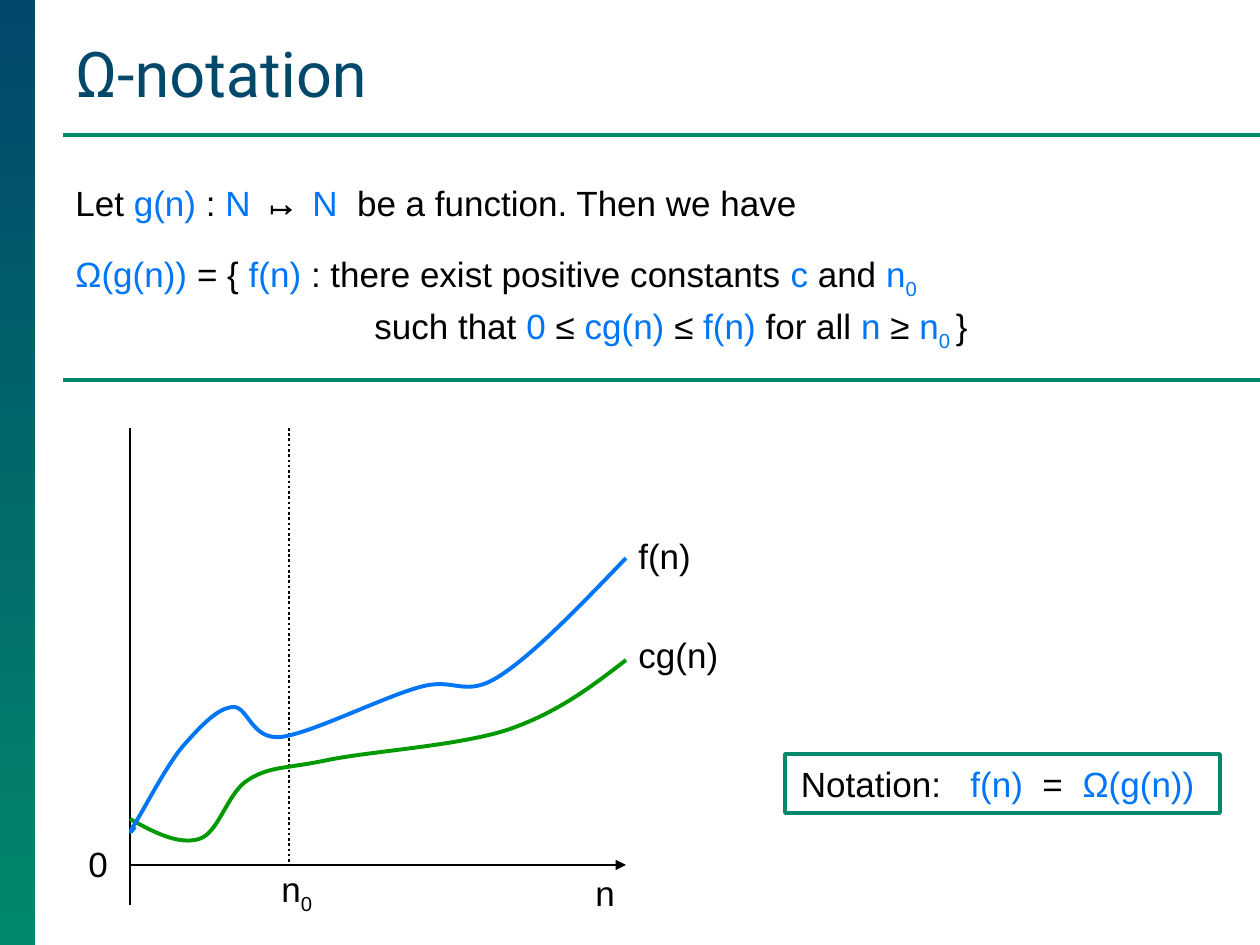
from lxml.etree import SubElement
from pptx import Presentation
from pptx.dml.color import RGBColor
from pptx.enum.dml import MSO_LINE
from pptx.enum.shapes import MSO_CONNECTOR, MSO_SHAPE
from pptx.enum.text import MSO_ANCHOR, PP_ALIGN
from pptx.oxml.ns import qn
from pptx.util import Pt

SCALE = 914400 / 126  # EMU per px
COLORS = {"navy": "01486B", "teal": "02886B", "blue": "0075F6",
          "green": "009900", "black": "000000"}

# Curves: a start point, then three points for each Bezier segment
CG_CURVE = [(0, 391), (25, 405), (49, 417), (69, 411), (89, 405), (97, 365),
            (118, 352), (140, 338), (155, 341), (198, 332), (242, 323),
            (327, 318), (377, 302), (427, 285), (461, 259), (496, 232)]
F_CURVE = [(5, 399), (5, 399), (-4, 411), (4, 397), (12, 385), (36, 338),
           (53, 318), (70, 299), (87, 280), (103, 279), (118, 278), (121, 312),
           (151, 309), (182, 305), (253, 269), (290, 259), (325, 249),
           (334, 270), (368, 249), (403, 227), (450, 178), (496, 130)]


def px(*lengths):
    return [round(length * SCALE) for length in lengths]


def color(name):
    return RGBColor.from_string(COLORS[name])


def add_run(para, text, shade="black", size=20, font="Arial", sub=False):
    span = para.add_run()
    span.text = text
    span.font.size = Pt(size)
    span.font.name = font
    span.font.color.rgb = color(shade)
    if sub:
        span._r.get_or_add_rPr().set("baseline", "-25000")
    return span


def add_runs(para, runs):
    """Write (text, color) runs; a third item makes the run a subscript."""
    for text, shade, *sub in runs:
        add_run(para, text, shade, sub=bool(sub))


def add_text_box(page, left, top, width, height):
    box = page.shapes.add_textbox(*px(left, top, width, height))
    box.text_frame.word_wrap = True
    return box.text_frame


def add_line(page, start, end, shade="black", weight=1.5):
    line = page.shapes.add_connector(MSO_CONNECTOR.STRAIGHT, *px(*start, *end))
    line.line.color.rgb = color(shade)
    line.line.width = Pt(weight)
    SubElement(line._element.spPr, qn("a:effectLst"))
    return line


def add_curve(page, left, top, points, shade):
    builder = page.shapes.build_freeform(*points[0], scale=SCALE)
    builder.add_line_segments(points[1:], close=False)
    curve = builder.convert_to_shape(*px(left, top))
    # Join each three straight segments into one Bezier segment
    segments = list(curve._element.iter(qn("a:lnTo")))
    for first, second, third in zip(*[iter(segments)] * 3):
        first.tag = qn("a:cubicBezTo")
        for extra in (second, third):
            first.append(extra[0])
            extra.getparent().remove(extra)
    curve.fill.background()
    curve.line.color.rgb = color(shade)
    curve.line.width = Pt(2.25)
    curve.shadow.inherit = False


def add_side_band(page, left, top, width, height):
    band = page.shapes.add_shape(MSO_SHAPE.RECTANGLE, *px(left, top, width, height))
    band.shadow.inherit = False
    band.line.fill.background()
    band.fill.gradient()
    band.fill.gradient_angle = 270
    for stop, shade in zip(band.fill.gradient_stops, ("navy", "teal")):
        stop.color.rgb = color(shade)


def add_title(page, left, top, width, height):
    frame = add_text_box(page, left, top, width, height)
    frame.vertical_anchor = MSO_ANCHOR.BOTTOM
    add_run(frame.paragraphs[0], "Ω-notation", "navy", 36, "Roboto")


def add_definition(page, left, top, width, height):
    frame = add_text_box(page, left, top, width, height)
    para = frame.paragraphs[0]
    add_runs(para, [("Let", "black"), (" g(n) ", "blue"), (":", "black"),
                    (" N ", "blue")])
    add_run(para, "↦", font="Noto Sans Mono").font.bold = True
    add_runs(para, [(" N ", "blue"), (" be a function. Then we have", "black")])

    para = frame.add_paragraph()
    para.space_before = Pt(17)
    add_runs(para, [("Ω(g(n))", "blue"), (" = { ", "black"), ("f(n)", "blue"),
                    (" : there exist positive constants ", "black"),
                    ("c", "blue"), (" and ", "black"), ("n", "blue"),
                    ("0", "blue", "sub")])

    para = frame.add_paragraph()
    para._p.get_or_add_pPr().set("marL", str(px(299)[0]))
    para.space_before = Pt(2)
    add_runs(para, [("such that ", "black"), ("0 ", "blue"), ("≤", "black"),
                    (" cg(n) ", "blue"), ("≤", "black"), (" f(n)", "blue"),
                    (" for all ", "black"), ("n", "blue"), (" ≥ ", "black"),
                    ("n", "blue"), ("0 ", "blue", "sub"), ("}", "black")])


def add_plot(page, left, top, width, height):
    base, threshold = top + 437, left + 159
    right = left + width
    # Axes and threshold
    axis = add_line(page, (left, base), (right, base))
    SubElement(axis.line._get_or_add_ln(), qn("a:tailEnd"), type="triangle")
    add_line(page, (left, top), (left, top + height))
    marker = add_line(page, (threshold, top), (threshold, base))
    marker.line.dash_style = MSO_LINE.ROUND_DOT
    # Growth curves
    add_curve(page, left, top, CG_CURVE, "green")
    add_curve(page, left, top, F_CURVE, "blue")
    # Labels
    labels = [(right, top + 100, 228, [("f(n)", "black")]),
              (right, top + 199, 208, [("cg(n)", "black")]),
              (left - 54, base - 29, 45, [("0", "black")]),
              (right - 43, base, 45, [("n", "black")]),
              (threshold - 20, base - 4, 79, [("n", "black"), ("0", "black", "sub")])]
    for label_left, label_top, label_width, runs in labels:
        frame = add_text_box(page, label_left, label_top, label_width, 54)
        add_runs(frame.paragraphs[0], runs)


def add_notation(page, left, top, width, height):
    box = page.shapes.add_shape(MSO_SHAPE.RECTANGLE, *px(left, top, width, height))
    box.shadow.inherit = False
    box.fill.background()
    box.line.color.rgb = color("teal")
    box.line.width = Pt(2.25)
    box.text_frame.vertical_anchor = MSO_ANCHOR.MIDDLE
    para = box.text_frame.paragraphs[0]
    para.alignment = PP_ALIGN.CENTER
    add_runs(para, [("Notation:   ", "black"), ("f(n)", "blue"),
                    ("  =  ", "black"), ("Ω(g(n)) ", "blue")])


def main():
    deck = Presentation()
    deck.slide_width, deck.slide_height = px(1260, 945)
    page = deck.slides.add_slide(deck.slide_layouts[6])
    add_side_band(page, 0, 0, 35, 945)
    add_title(page, 63, 26, 1169, 90)
    add_definition(page, 63, 175, 1197, 190)
    for rule_top in (135, 380):
        add_line(page, (63, rule_top), (1260, rule_top), "teal", 2.25)
    add_plot(page, 130, 428, 496, 477)
    add_notation(page, 785, 754, 435, 59)
    deck.save("out.pptx")


if __name__ == "__main__":
    main()
